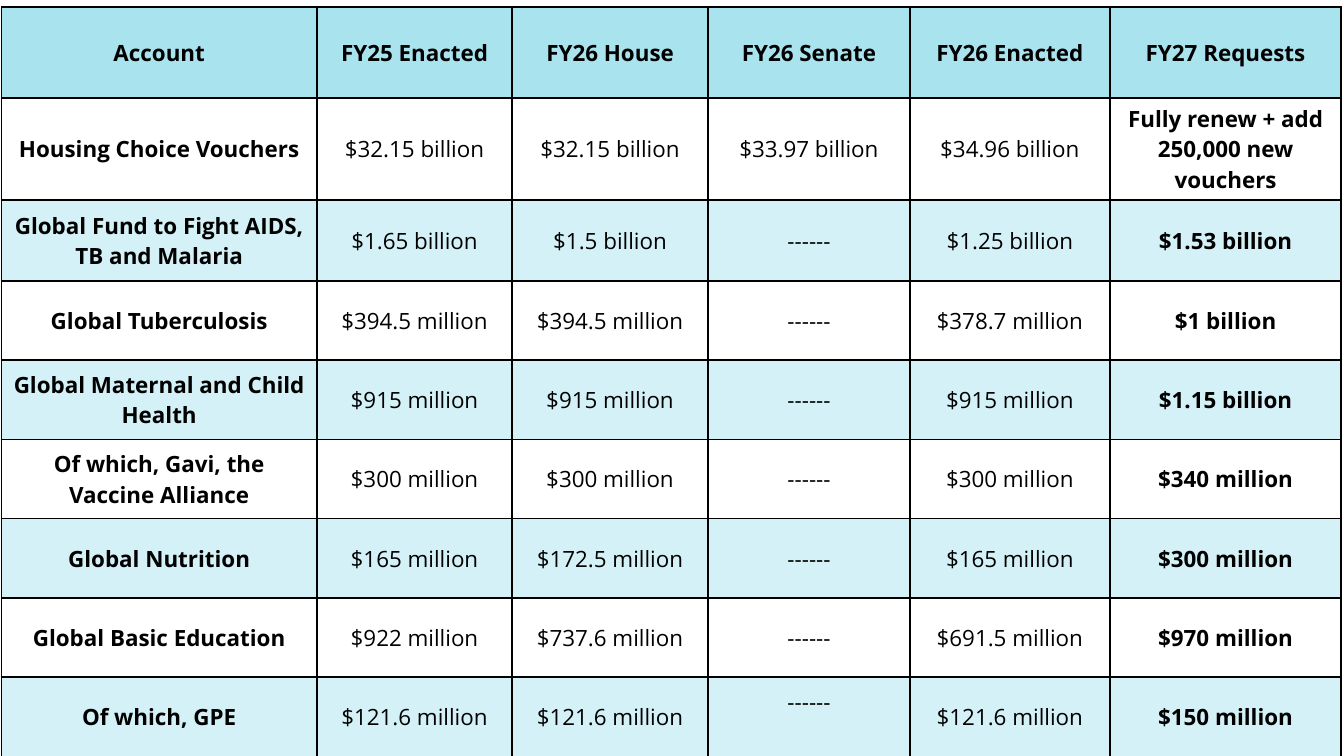
from lxml.etree import SubElement
from pptx import Presentation
from pptx.dml.color import RGBColor
from pptx.enum.text import MSO_ANCHOR, PP_ALIGN
from pptx.oxml.ns import qn
from pptx.util import Inches, Pt

# Content
NONE = "------"
HEADINGS = ("Account", "FY25 Enacted", "FY26 House", "FY26 Senate",
            "FY26 Enacted", "FY27 Requests")
ACCOUNTS = [
    ("Housing Choice Vouchers", "$32.15 billion", "$32.15 billion",
     "$33.97 billion", "$34.96 billion",
     "Fully renew + add 250,000 new vouchers"),
    ("Global Fund to Fight AIDS, TB and Malaria", "$1.65 billion",
     "$1.5 billion", NONE, "$1.25 billion", "$1.53 billion"),
    ("Global Tuberculosis", "$394.5 million", "$394.5 million", NONE,
     "$378.7 million", "$1 billion"),
    ("Global Maternal and Child Health", "$915 million", "$915 million", NONE,
     "$915 million", "$1.15 billion"),
    ("Of which, Gavi, the Vaccine Alliance", "$300 million", "$300 million",
     NONE, "$300 million", "$340 million"),
    ("Global Nutrition", "$165 million", "$172.5 million", NONE,
     "$165 million", "$300 million"),
    ("Global Basic Education", "$922 million", "$737.6 million", NONE,
     "$691.5 million", "$970 million"),
    ("Of which, GPE", "$121.6 million", "$121.6 million", NONE,
     "$121.6 million", "$150 million"),
]
BUDGET = [HEADINGS, *ACCOUNTS]

# Theme and layout
THEME = {"font": "Open Sans", "size": 12, "text": "000000", "border": "000000",
         "border_width": 1, "heading": "A8E3EE", "plain": "FFFFFF",
         "band": "D3F1F6"}
SLIDE_WIDTH = Inches(10)
SLIDE_HEIGHT = SLIDE_WIDTH * 9 // 16
LEFT, TOP = 0.01, 0.05
COLUMN_WIDTHS = (2.35, 1.45, 1.46, 1.5, 1.49, 1.72)
ROW_HEIGHTS = (0.68, 0.72, 0.6) + (0.59,) * 6
MARGIN_X, MARGIN_Y = 0.07, 0.04
RAISED_MARGIN = 0.27  # lifts the dashes in the last row by half a line


def row_fill(row):
    if row == 0:
        return THEME["heading"]
    return THEME["plain"] if row % 2 else THEME["band"]


def add_borders(cell):
    properties = cell._tc.get_or_add_tcPr()
    for side in ("a:lnL", "a:lnR", "a:lnT", "a:lnB"):
        line = SubElement(properties, qn(side),
                          w=str(Pt(THEME["border_width"])))
        paint = SubElement(line, qn("a:solidFill"))
        SubElement(paint, qn("a:srgbClr"), val=THEME["border"])


def format_cell(cell, words, fill, bold):
    add_borders(cell)
    cell.fill.solid()
    cell.fill.fore_color.rgb = RGBColor.from_string(fill)
    cell.vertical_anchor = MSO_ANCHOR.MIDDLE
    cell.margin_left = cell.margin_right = Inches(MARGIN_X)
    cell.margin_top = cell.margin_bottom = Inches(MARGIN_Y)
    paragraph = cell.text_frame.paragraphs[0]
    paragraph.text = words
    paragraph.alignment = PP_ALIGN.CENTER
    font = paragraph.runs[0].font
    font.name = THEME["font"]
    font.size = Pt(THEME["size"])
    font.bold = bold
    font.color.rgb = RGBColor.from_string(THEME["text"])


def main():
    deck = Presentation()
    deck.slide_width, deck.slide_height = SLIDE_WIDTH, SLIDE_HEIGHT
    slide = deck.slides.add_slide(deck.slide_layouts[6])

    # Budget table
    table = slide.shapes.add_table(
        len(BUDGET), len(HEADINGS), Inches(LEFT), Inches(TOP),
        Inches(sum(COLUMN_WIDTHS)), Inches(sum(ROW_HEIGHTS))).table
    for column, width in zip(table.columns, COLUMN_WIDTHS):
        column.width = Inches(width)
    for table_row, height in zip(table.rows, ROW_HEIGHTS):
        table_row.height = Inches(height)

    # Headings, account names and requests are bold
    last_column = len(HEADINGS) - 1
    for row, entries in enumerate(BUDGET):
        for column, words in enumerate(entries):
            bold = row == 0 or column in (0, last_column)
            format_cell(table.cell(row, column), words, row_fill(row), bold)
    senate_gpe = table.cell(len(BUDGET) - 1, HEADINGS.index("FY26 Senate"))
    senate_gpe.margin_bottom = Inches(RAISED_MARGIN)

    deck.save("out.pptx")


if __name__ == "__main__":
    main()
